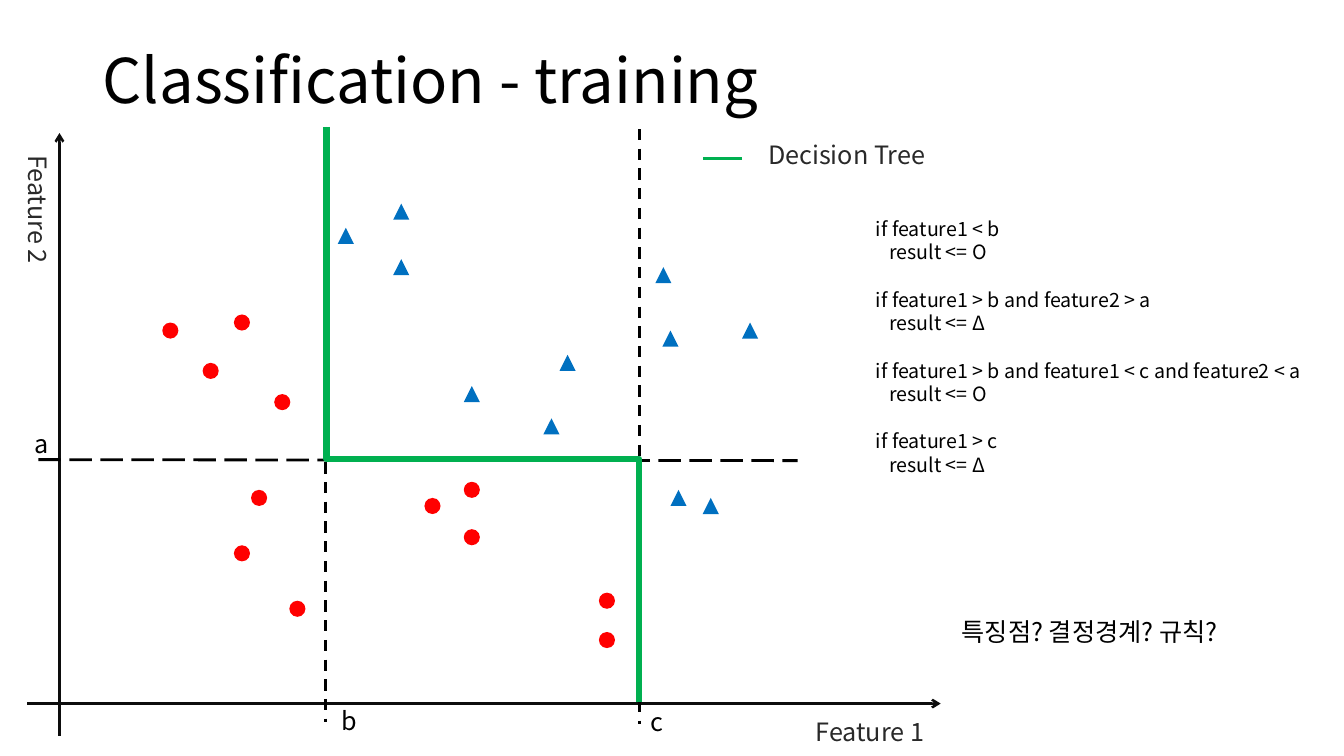
from typing import NamedTuple

from lxml.etree import SubElement
from pptx import Presentation
from pptx.dml.color import RGBColor
from pptx.enum.dml import MSO_LINE as Dash
from pptx.enum.shapes import MSO_CONNECTOR as Conn, MSO_SHAPE as Form
from pptx.enum.text import MSO_ANCHOR as Anchor, MSO_AUTO_SIZE as Fit
from pptx.oxml.ns import qn
from pptx.util import Inches, Pt

FONT = "Noto Sans CJK KR"
BLACK, INK, GRAY = "000000", "0D0D0D", "292929"
RED, BLUE, GREEN = "FF0000", "0070C0", "00B050"
MARK = 0.16


class Group(NamedTuple):
    form: Form
    color: str
    spots: list[tuple[float, float]]


class Line(NamedTuple):
    start: tuple[float, float]
    end: tuple[float, float]
    color: str
    width: float = 2
    dash: Dash | None = None
    arrow: bool = False


class Label(NamedTuple):
    text: str
    box: tuple[float, float, float, float]
    color: str = BLACK
    vert: bool = False


class Rule(NamedTuple):
    test: str
    result: str


# Data points, by class
GROUPS = [
    Group(Form.OVAL, RED, [
        (2.32, 3.12), (2.01, 3.6), (1.61, 3.2), (2.49, 4.86),
        (4.6, 4.78), (4.21, 4.94), (4.6, 5.25), (2.87, 5.96),
        (5.94, 6.27), (2.32, 5.41), (2.72, 3.91), (5.94, 5.88)]),
    Group(Form.ISOSCELES_TRIANGLE, BLUE, [
        (3.9, 2.02), (3.9, 2.57), (5.55, 3.52), (5.39, 4.15),
        (6.65, 4.86), (6.97, 4.94), (6.57, 3.28), (3.35, 2.26),
        (4.6, 3.83), (6.5, 2.65), (7.36, 3.2)]),
]

AXES = [
    Line((0.59, 7.3), (0.59, 1.32), INK, 1.75, arrow=True),
    Line((0.27, 6.98), (9.33, 6.98), INK, 1.75, arrow=True),
]

# Legend key and the thresholds b, a and c
GUIDES = [
    Line((7.36, 1.57), (6.97, 1.57), GREEN),
    Line((3.23, 1.26), (3.23, 7.16), BLACK, dash=Dash.DASH),
    Line((0.38, 4.56), (7.91, 4.57), BLACK, dash=Dash.LONG_DASH),
    Line((6.34, 1.28), (6.34, 7.18), BLACK, dash=Dash.DASH),
]

LABELS = [
    Label("Feature 2", (0.08, 1.44, 0.5, 1.21), GRAY, vert=True),
    Label("Feature 1", (7.99, 7.06, 1.31, 0.4), GRAY),
    Label("Decision Tree", (7.52, 1.33, 1.8, 0.4), GRAY),
    Label("a", (0.24, 4.2, 0.34, 0.4)),
    Label("b", (3.29, 6.95, 0.35, 0.4)),
    Label("c", (6.35, 6.96, 0.32, 0.4)),
    Label("특징점? 결정경계? 규칙?", (9.44, 6.07, 3.09, 0.4)),
]

RULES = [
    Rule("if feature1 < b", "result <= O"),
    Rule("if feature1 > b and feature2 > a", "result <= Δ"),
    Rule("if feature1 > b and feature1 < c and feature2 < a", "result <= O"),
    Rule("if feature1 > c", "result <= Δ"),
]


def paint(part, color: str) -> None:
    """Give a fill, line fill or font a solid colour."""
    if hasattr(part, "solid"):
        part.solid()
        part.fore_color.rgb = RGBColor.from_string(color)
    else:
        part.color.rgb = RGBColor.from_string(color)


def add_box(slide, box: tuple, wrap: bool = False, fit: Fit = Fit.SHAPE_TO_FIT_TEXT):
    frame = slide.shapes.add_textbox(*map(Inches, box)).text_frame
    frame.word_wrap = wrap
    frame.auto_size = fit
    return frame


def write(para, text: str, *, size: float = 18, color: str = BLACK,
          before: float = 0, indent: float = 0, spacing: float = 1) -> None:
    run = para.add_run()
    run.text = text
    run.font.size = Pt(size)
    run.font.name = FONT
    paint(run.font, color)
    SubElement(run.font._element, qn("a:ea"), typeface=FONT)
    para.space_before = Pt(before)
    para.line_spacing = spacing
    if indent:
        para._p.get_or_add_pPr().set("marL", str(Inches(indent)))


def draw_line(slide, line: Line, kind: Conn = Conn.STRAIGHT):
    link = slide.shapes.add_connector(
        kind, *map(Inches, line.start + line.end))
    paint(link.line.fill, line.color)
    link.line.width = Pt(line.width)
    if line.dash:
        link.line.dash_style = line.dash
    if line.arrow:
        SubElement(link.line._get_or_add_ln(), qn("a:tailEnd"), type="arrow")
    SubElement(link._element.spPr, qn("a:effectLst"))
    return link


def draw_group(slide, group: Group) -> None:
    for left, top in group.spots:
        mark = slide.shapes.add_shape(
            group.form, *map(Inches, (left, top, MARK, MARK)))
        mark.shadow.inherit = False
        paint(mark.fill, group.color)
        mark.line.fill.background()


def draw_label(slide, label: Label) -> None:
    frame = add_box(slide, label.box)
    if label.vert:
        frame._txBody.bodyPr.set("vert", "eaVert")
    write(frame.paragraphs[0], label.text, color=label.color)


def draw_tree(slide) -> None:
    """Draw the stepped boundary: an elbow turned a quarter left."""
    step = draw_line(slide, Line((7.64, 2.56), (1.94, 5.66), GREEN, 4.5), Conn.ELBOW)
    step.rotation = 270 if hasattr(step, "rotation") else 0
    props = step._element.spPr
    props.find(qn("a:xfrm")).set("rot", str(270 * 60000))
    geom = props.find(qn("a:prstGeom"))
    guides = geom.find(qn("a:avLst"))
    SubElement(guides, qn("a:gd"), name="adj1", fmla="val 57800")


def draw_rules(slide) -> None:
    frame = add_box(slide, (8.59, 2.1, 4.66, 2.69), wrap=True)
    para = frame.paragraphs[0]
    for i, rule in enumerate(RULES):
        if i:
            para = frame.add_paragraph()
        write(para, rule.test, size=14, before=17 if i else 0)
        write(frame.add_paragraph(), rule.result, size=14, indent=0.13)


def main() -> None:
    deck = Presentation()
    deck.slide_width, deck.slide_height = Inches(13.33), Inches(7.5)
    slide = deck.slides.add_slide(deck.slide_layouts[6])

    # Title
    title = add_box(slide, (0.92, 0.4, 11.5, 0.86), wrap=True, fit=Fit.NONE)
    title.vertical_anchor = Anchor.MIDDLE
    write(title.paragraphs[0], "Classification - training", size=44, spacing=0.9)

    # Chart
    for axis in AXES:
        draw_line(slide, axis)
    for group in GROUPS:
        draw_group(slide, group)
    for guide in GUIDES:
        draw_line(slide, guide)
    draw_tree(slide)

    # Words
    for label in LABELS:
        draw_label(slide, label)
    draw_rules(slide)

    deck.save("out.pptx")


if __name__ == "__main__":
    main()
